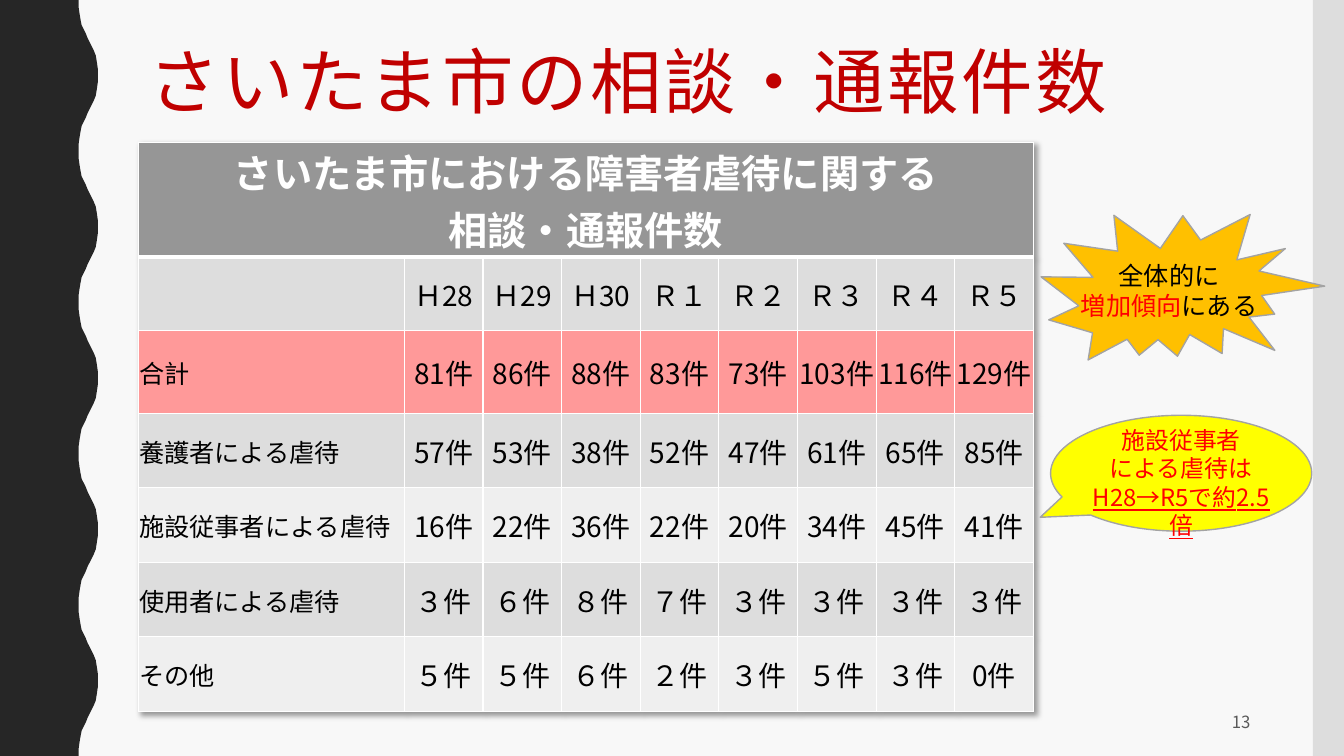
from lxml import etree
from pptx import Presentation
from pptx.dml.color import RGBColor
from pptx.enum.shapes import MSO_SHAPE
from pptx.enum.text import MSO_ANCHOR, PP_ALIGN
from pptx.oxml.ns import qn
from pptx.util import Pt

RECT = MSO_SHAPE.RECTANGLE
BURST = MSO_SHAPE.EXPLOSION2
BUBBLE = MSO_SHAPE.OVAL_CALLOUT
MID = MSO_ANCHOR.MIDDLE
LEFT, MIDDLE, RIGHT = PP_ALIGN.LEFT, PP_ALIGN.CENTER, PP_ALIGN.RIGHT

PX = 9144
WIDE, HIGH = 1333, 750
FONT = "Noto Sans CJK JP"
HEX = {
    "back": "F8F8F8", "dark": "262626", "band": "DDDDDD", "pale": "EFEFEF",
    "head": "969696", "total": "FF9999", "title": "C00000", "red": "FF0000",
    "black": "000000", "white": "FFFFFF", "page": "595959",
    "yellow": "FFFF00", "gold": "FFC000", "edge": "A3A3A3",
}

TITLE = "さいたま市の相談・通報件数"
HEAD = ["さいたま市における障害者虐待に関する", "相談・通報件数"]
ROWS = [
    ("band", ["", "Ｈ28", "Ｈ29", "Ｈ30", "Ｒ１", "Ｒ２", "Ｒ３", "Ｒ４", "Ｒ５"]),
    ("total", ["合計", "81件", "86件", "88件", "83件", "73件", "103件", "116件", "129件"]),
    ("band", ["養護者による虐待", "57件", "53件", "38件", "52件", "47件", "61件", "65件", "85件"]),
    ("pale", ["施設従事者による虐待", "16件", "22件", "36件", "22件", "20件", "34件", "45件", "41件"]),
    ("band", ["使用者による虐待", "３件", "６件", "８件", "７件", "３件", "３件", "３件", "３件"]),
    ("pale", ["その他", "５件", "５件", "６件", "２件", "３件", "５件", "３件", "0件"]),
]
STAFF = [
    [("施設従事者", "red", False)],
    [("による虐待は", "red", False)],
    [("H28→R5で約2.5倍", "red", True)],
]
TREND = [
    [("全体的に", "black", False)],
    [("増加傾向", "red", False), ("にある", "black", False)],
]
WAVE = [(78, 0), (78, 7), (79, 14), (80, 20), (81, 25), (83, 29), (85, 33), (87, 38),
        (89, 42), (91, 46), (93, 50), (95, 55), (96, 61), (97, 68), (97, 75)]
PERIOD = 150
LABEL, YEAR = 264, 78
TALL = [114, 73, 82, 74, 74, 74, 74]


def rgb(name):
    return RGBColor.from_string(HEX[name])


def paint(shape, fill, edge=None):
    shape.shadow.inherit = False
    shape.fill.solid()
    shape.fill.fore_color.rgb = rgb(fill)
    if edge:
        shape.line.color.rgb = rgb(edge)
        shape.line.width = Pt(1)
    else:
        shape.line.fill.background()


def style(run, size, color, bold=False, under=False):
    font = run.font
    font.size, font.name, font.bold = Pt(size), FONT, bold
    font.color.rgb = rgb(color)
    if under:
        font.underline = True
    etree.SubElement(run._r.get_or_add_rPr(), qn("a:ea"), typeface=FONT)


def box(place, lines, size, align, space=1.0):
    frame = slide.shapes.add_textbox(*[n * PX for n in place]).text_frame
    frame.word_wrap = True
    for i, line in enumerate(lines):
        para = frame.add_paragraph() if i else frame.paragraphs[0]
        para.alignment, para.line_spacing = align, space
        for text, color, under in line:
            run = para.add_run()
            run.text = text
            style(run, size, color, under=under)
    return frame


def shape(kind, place, fill, edge=None):
    item = slide.shapes.add_shape(kind, *[n * PX for n in place])
    paint(item, fill, edge)
    return item


def cell_text(cell, lines, size, color, align, bold=False):
    cell.text_frame.text = "\n".join(lines)
    for para in cell.text_frame.paragraphs:
        para.alignment = align
        for run in para.runs:
            style(run, size, color, bold)


def cell_look(cell, fill, low=1):
    cell.vertical_anchor = MID
    cell.margin_left = cell.margin_right = cell.margin_top = PX
    cell.margin_bottom = 0
    props = cell._tc.get_or_add_tcPr()
    for side in "LRTB":
        width = Pt(low if side == "B" else 1)
        line = etree.SubElement(props, qn("a:ln" + side), w=str(width))
        solid = etree.SubElement(line, qn("a:solidFill"))
        etree.SubElement(solid, qn("a:srgbClr"), val=HEX["white"])
    cell.fill.solid()
    cell.fill.fore_color.rgb = rgb(fill)


def add_wave():
    half = WAVE + [(x, PERIOD - y) for x, y in WAVE[-2::-1]]
    edge = [(x, y + n * PERIOD) for n in range(HIGH // PERIOD) for x, y in half]
    path = slide.shapes.build_freeform(0, 0, scale=PX)
    path.add_line_segments(edge + [(0, HIGH)], close=True)
    paint(path.convert_to_shape(), "dark")


def add_counts():
    years = len(ROWS[0][1]) - 1
    size = (LABEL + years * YEAR, sum(TALL))
    place = [n * PX for n in (137, 141, *size)]
    table = slide.shapes.add_table(len(TALL), years + 1, *place).table
    table.horz_banding = False
    for c, col in enumerate(table.columns):
        col.width = (YEAR if c else LABEL) * PX
    for row, tall in zip(table.rows, TALL):
        row.height = tall * PX
    for c in range(years + 1):
        cell_look(table.cell(0, c), "head", 3)
    table.cell(0, 0).merge(table.cell(0, years))
    cell_text(table.cell(0, 0), HEAD, 28, "white", MIDDLE, True)
    for r, (fill, texts) in enumerate(ROWS, 1):
        for c, text in enumerate(texts):
            cell = table.cell(r, c)
            cell_look(cell, fill)
            cell_text(cell, [text], 20 if c else 18, "black", MIDDLE if c else LEFT)
    effect = etree.Element(qn("a:effectLst"))
    shade = etree.SubElement(effect, qn("a:outerShdw"), blurRad="50800", dist="38100",
                             dir="2700000", algn="tl", rotWithShape="0")
    tint = etree.SubElement(shade, qn("a:srgbClr"), val=HEX["black"])
    etree.SubElement(tint, qn("a:alpha"), val="40000")
    table._tbl.tblPr.insert(0, effect)


deck = Presentation()
deck.slide_width, deck.slide_height = WIDE * PX, HIGH * PX
slide = deck.slides.add_slide(deck.slide_layouts[6])
slide.background.fill.solid()
slide.background.fill.fore_color.rgb = rgb("back")

add_wave()
shape(RECT, (1302, 0, 31, HIGH), "band")
title = box((137, 42, 1113, 163), [[(TITLE, "title", False)]], 51, LEFT, 0.9)
title.paragraphs[0].runs[0]._r.get_or_add_rPr().set("spc", "200")
page = box((942, 697, 308, 38), [[("13", "page", False)]], 12, RIGHT)
page.vertical_anchor = MID
add_counts()

bubble = shape(BUBBLE, (1042, 412, 259, 115), "yellow", "edge")
bubble.adjustments[0], bubble.adjustments[1] = -0.54, 0.38
box((1067, 417, 209, 96), STAFF, 17, MIDDLE)
burst = shape(BURST, (1033, 200, 277, 175), "gold", "edge")
burst.rotation = 12.2
box((1060, 253, 199, 71), TREND, 18, MIDDLE)

deck.save("out.pptx")
